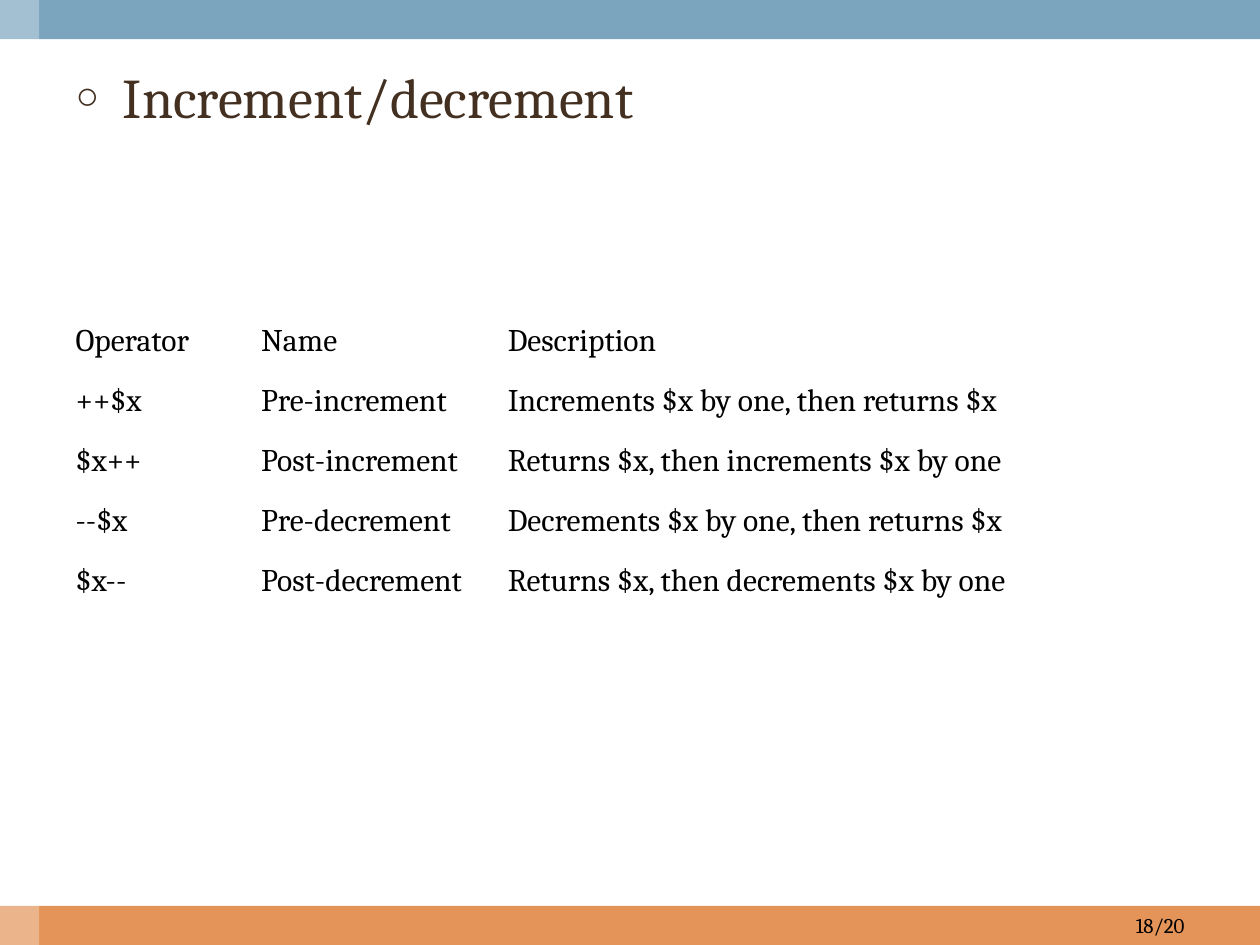
from lxml.etree import SubElement
from pptx import Presentation
from pptx.dml.color import RGBColor
from pptx.enum.shapes import MSO_SHAPE
from pptx.enum.text import MSO_ANCHOR, PP_ALIGN
from pptx.oxml.ns import qn
from pptx.util import Pt

FONT = "Cambria"
WIDTH, HEIGHT = 720, 540
BAND = 22.4

OPERATORS = [
    ("Operator", "Name", "Description"),
    ("++$x", "Pre-increment", "Increments $x by one, then returns $x"),
    ("$x++", "Post-increment", "Returns $x, then increments $x by one"),
    ("--$x", "Pre-decrement", "Decrements $x by one, then returns $x"),
    ("$x--", "Post-decrement", "Returns $x, then decrements $x by one"),
]
COLUMN_WIDTHS = (106, 141, 389)


def rgb(color):
    return RGBColor.from_string(color)


def style_text(p, size, color):
    for r in p.runs:
        r.font.name = FONT
        r.font.size = Pt(size)
        r.font.color.rgb = rgb(color)


def add_band(slide, box, color, opacity=100):
    sp = slide.shapes.add_shape(MSO_SHAPE.RECTANGLE, *map(Pt, box))
    sp.shadow.inherit = False
    sp.line.fill.background()
    sp.fill.solid()
    sp.fill.fore_color.rgb = rgb(color)
    if opacity < 100:
        srgb = sp.fill._xPr.find(".//" + qn("a:srgbClr"))
        SubElement(srgb, qn("a:alpha"), val=str(opacity * 1000))


def add_frame(slide):
    add_band(slide, (0, HEIGHT - BAND, WIDTH, BAND), "E49458")
    add_band(slide, (0, 0, WIDTH, BAND), "7BA5BE")
    add_band(slide, (0, 0, BAND, HEIGHT), "FFFFFF", opacity=30)


def fill_body(sp, box, text):
    sp.left, sp.top, sp.width, sp.height = map(Pt, box)
    sp.text_frame.text = text
    p = sp.text_frame.paragraphs[0]
    p.space_before = Pt(6.4)
    style_text(p, 32, "433021")
    # Hanging bullet
    pPr = p._p.get_or_add_pPr()
    pPr.set("marL", str(Pt(27)))
    pPr.set("indent", str(-Pt(27)))
    SubElement(pPr, qn("a:buSzPct"), val="70000")
    SubElement(pPr, qn("a:buChar"), char="○")


def add_page_number(slide, box, text):
    tf = slide.shapes.add_textbox(*map(Pt, box)).text_frame
    tf.word_wrap = True
    tf.vertical_anchor = MSO_ANCHOR.MIDDLE
    tf.text = text
    p = tf.paragraphs[0]
    p.alignment = PP_ALIGN.RIGHT
    style_text(p, 12, "000000")


def add_operator_table(slide, box, rows):
    table = slide.shapes.add_table(
        len(rows), len(COLUMN_WIDTHS), *map(Pt, box)).table
    table.first_row = table.horz_banding = False
    for column, width in zip(table.columns, COLUMN_WIDTHS):
        column.width = Pt(width)
    for row, texts in zip(table.rows, rows):
        for cell, text in zip(row.cells, texts):
            cell.fill.background()
            cell.vertical_anchor = MSO_ANCHOR.MIDDLE
            cell.text = text
            style_text(cell.text_frame.paragraphs[0], 18, "000000")


def main():
    prs = Presentation()
    prs.slide_width, prs.slide_height = Pt(WIDTH), Pt(HEIGHT)
    slide = prs.slides.add_slide(prs.slide_layouts[1])

    # The heading is a list item, so the title stays unused
    title = slide.shapes.title._element
    title.getparent().remove(title)

    add_frame(slide)
    fill_body(slide.placeholders[1], (36, 32, 648, 450), "Increment/decrement")
    add_page_number(slide, (516, HEIGHT - BAND, 168, BAND), "18/20")
    add_operator_table(slide, (36, 177.8, sum(COLUMN_WIDTHS), 171.5), OPERATORS)
    prs.save("out.pptx")


if __name__ == "__main__":
    main()
